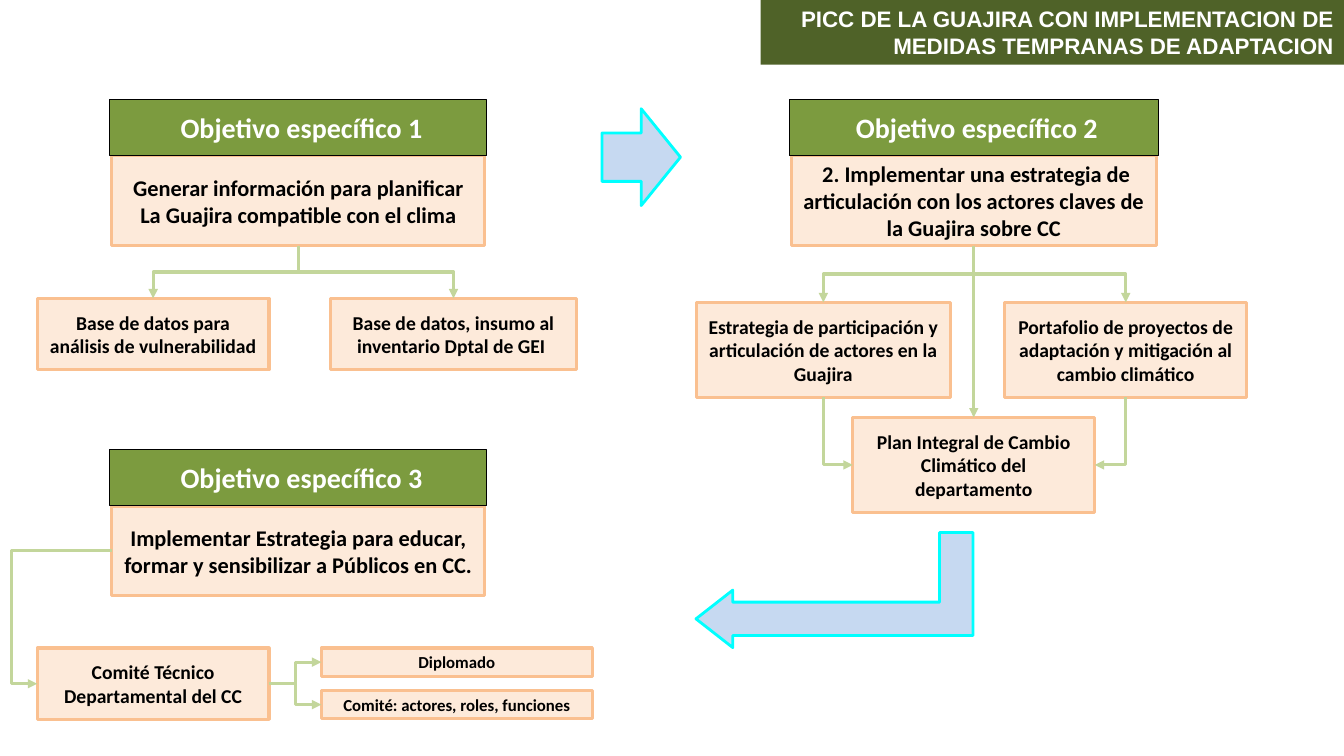
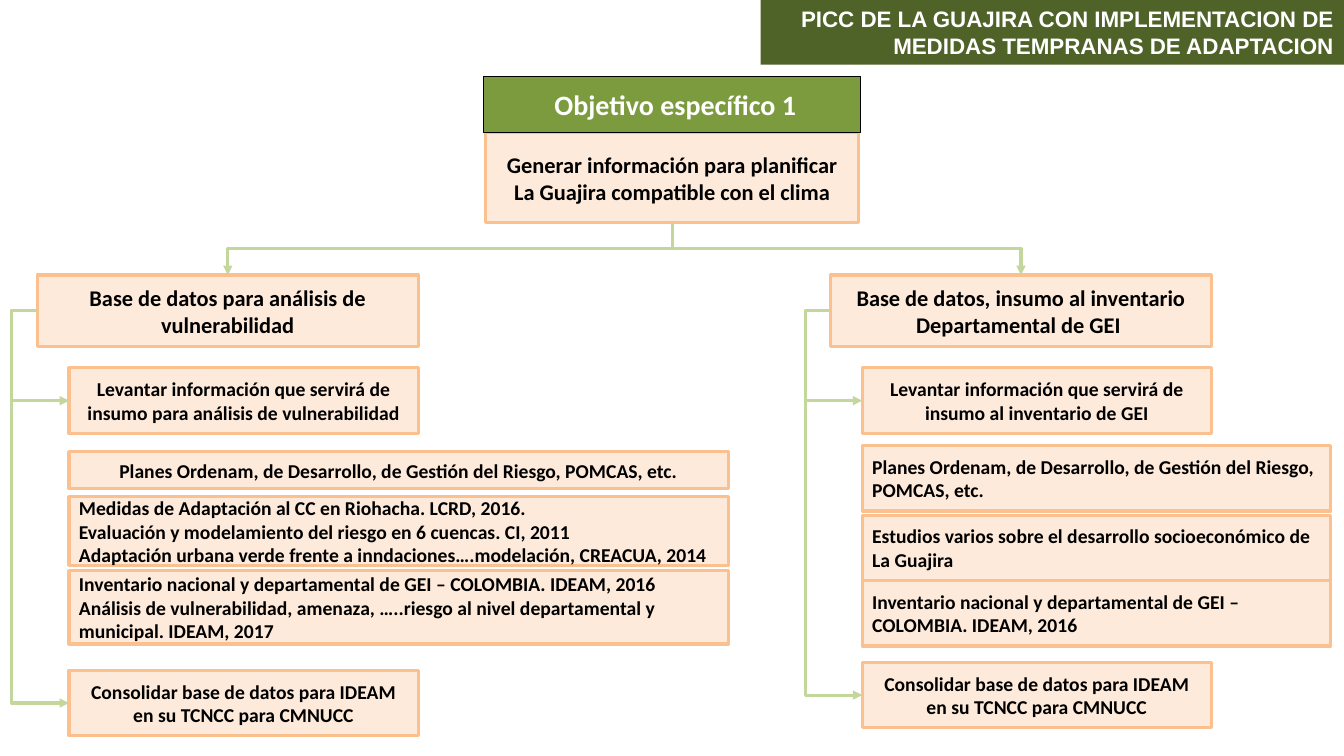
from typing import NamedTuple, Optional

from pptx import Presentation
from pptx.dml.color import RGBColor
from pptx.enum.shapes import MSO_CONNECTOR, MSO_SHAPE
from pptx.enum.text import MSO_ANCHOR, MSO_AUTO_SIZE, PP_ALIGN
from pptx.oxml.ns import qn
from pptx.oxml.xmlchemy import OxmlElement
from pptx.shapes.autoshape import Shape
from pptx.shapes.connector import Connector
from pptx.slide import Slide
from pptx.util import Cm, Pt

# Shared look
BAND, HEAD, CREAM, PEACH = "4F6228", "7C9B3F", "FDEADA", "FAC090"
LINK, SKY, CYAN = "C3D69B", "C6D9F1", "00FFFF"
WHITE, BLACK = "FFFFFF", "000000"
TITLE = "PICC DE LA GUAJIRA CON IMPLEMENTACION DE MEDIDAS TEMPRANAS DE ADAPTACION"
GOAL = "Generar información para planificar La Guajira compatible con el clima"
MERGE = "Consolidar base de datos para IDEAM en su TCNCC para CMNUCC"
HEAD_H, BODY_H, NODE_H, STEP_H = 1.42, 2.26, 1.8, 1.65
INDENT, LOOP = 0.8, 0.64
TOP, LEFT, BOTTOM, RIGHT = range(4)  # connection sites of a rectangle


class Box(NamedTuple):
    """A text box of the chart; lengths in cm."""
    x: float
    y: float
    w: float
    h: float
    text: str
    size: int = 14
    align: PP_ALIGN = PP_ALIGN.CENTER
    fill: str = CREAM
    edge: str = PEACH
    width: float = 2.25
    ink: str = BLACK


class Branch(NamedTuple):
    """A column of slide 2: base, first step, sources and last step."""
    x: float
    base: str
    step: str
    wide: float
    items: list[tuple[float, float, str, PP_ALIGN]]
    end: float


def rgb(code: str) -> RGBColor:
    return RGBColor.from_string(code)


def paint(shape: Shape, fill: str, edge: str, width: float) -> None:
    shape.shadow.inherit = False
    shape.fill.solid()
    shape.fill.fore_color.rgb = rgb(fill)
    shape.line.color.rgb = rgb(edge)
    shape.line.width = Pt(width)


def write(shape: Shape, text: str, size: int, ink: str, align: PP_ALIGN,
          face: str = "Calibri") -> None:
    frame = shape.text_frame
    frame.word_wrap = True
    for i, line in enumerate(text.split("\n")):
        para = frame.add_paragraph() if i else frame.paragraphs[0]
        para.alignment = align
        run = para.add_run()
        run.text = line
        font = run.font
        font.name, font.size, font.bold = face, Pt(size), True
        font.color.rgb = rgb(ink)


def draw(slide: Slide, box: Box) -> Shape:
    shape = slide.shapes.add_shape(
        MSO_SHAPE.RECTANGLE, Cm(box.x), Cm(box.y), Cm(box.w), Cm(box.h))
    paint(shape, box.fill, box.edge, box.width)
    shape.text_frame.vertical_anchor = MSO_ANCHOR.MIDDLE
    write(shape, box.text, box.size, box.ink, box.align)
    return shape


def goal(slide: Slide, num: int, x: float, y: float, w: float, text: str) -> Shape:
    """Draw a numbered heading on its statement; return the statement."""
    body = draw(slide, Box(x, y + HEAD_H, w, BODY_H, text, 16))
    draw(slide, Box(x - 0.05, y, w + 0.1, HEAD_H, f" Objetivo específico {num}", 20,
                    fill=HEAD, edge=BLACK, width=0.75, ink=WHITE))
    return body


def turn(line: Connector) -> None:
    """Rotate an elbow so that it leaves its start downwards."""
    x1, y1, x2, y2 = line.begin_x, line.begin_y, line.end_x, line.end_y
    long, wide = y2 - y1, abs(x2 - x1)
    frame = line._element.spPr.find(qn("a:xfrm"))
    frame.attrib.clear()
    line.left, line.top = (x1 + x2 - long) // 2, (y1 + y2 - wide) // 2
    line.width, line.height = long, wide
    frame.set("rot", str((270 if x2 > x1 else 90) * 60000))
    if x2 > x1:
        frame.set("flipH", "1")


def link(slide: Slide, start: Shape, out: int, end: Shape, into: int,
         kind: MSO_CONNECTOR = MSO_CONNECTOR.ELBOW,
         via: Optional[float] = None) -> None:
    """Join two boxes with an arrow; via is the x of an outer bend in cm."""
    line = slide.shapes.add_connector(kind, 0, 0, 0, 0)
    line.begin_connect(start, out)
    line.end_connect(end, into)
    line.line.color.rgb = rgb(LINK)
    line.line.width = Pt(2.25)
    props = line._element.spPr
    form = props.find(qn("a:prstGeom"))
    if via is not None:
        ratio = (Cm(via) - line.begin_x) / (line.end_x - line.begin_x)
        guide = OxmlElement("a:gd")
        guide.set("name", "adj1")
        guide.set("fmla", f"val {round(ratio * 100000)}")
        form.find(qn("a:avLst")).append(guide)
    if kind == MSO_CONNECTOR.ELBOW and out == BOTTOM:
        turn(line)
        if into != TOP:
            form.set("prst", "bentConnector2")
    tip = OxmlElement("a:tailEnd")
    tip.set("type", "triangle")
    line.line._get_or_add_ln().append(tip)
    props.append(OxmlElement("a:effectLst"))


def arrow(slide: Slide, kind: MSO_SHAPE, x: float, y: float, w: float, h: float,
          angle: int) -> Shape:
    shape = slide.shapes.add_shape(kind, Cm(x), Cm(y), Cm(w), Cm(h))
    paint(shape, SKY, CYAN, 2)
    shape.rotation = angle
    return shape


def start(deck: Presentation) -> Slide:
    """Add a slide with the title band."""
    slide = deck.slides.add_slide(deck.slide_layouts[5])
    band = slide.shapes.title
    band.left, band.top, band.width, band.height = Cm(19.17), Cm(0), Cm(14.7), Cm(1.63)
    band.fill.solid()
    band.fill.fore_color.rgb = rgb(BAND)
    band.text_frame.auto_size = MSO_AUTO_SIZE.NONE
    band.text_frame.vertical_anchor = MSO_ANCHOR.TOP
    write(band, TITLE, 16, WHITE, PP_ALIGN.RIGHT, "Arial")
    return slide


def plan(deck: Presentation) -> None:
    slide = start(deck)

    # Goal 1
    first = goal(slide, 1, 2.82, 2.51, 9.4, GOAL)
    for box in (
        Box(0.94, 7.52, 5.84, NODE_H, "Base de datos para análisis de vulnerabilidad"),
        Box(8.33, 7.52, 6.2, NODE_H, "Base de datos, insumo al inventario Dptal de GEI "),
    ):
        link(slide, first, BOTTOM, draw(slide, box), TOP)

    # Goal 2
    second = goal(slide, 2, 19.94, 2.51, 9.2,
                  " 2. Implementar una estrategia de articulación con los actores "
                  "claves de la Guajira sobre CC")
    whole = draw(slide, Box(21.49, 10.52, 6.1, 2.39,
                            "Plan Integral de Cambio Climático del departamento"))
    link(slide, second, BOTTOM, whole, TOP, MSO_CONNECTOR.STRAIGHT)
    for box, side in (
        (Box(17.55, 7.62, 6.4, 2.39, "Estrategia de participación y articulación "
             "de actores en la Guajira"), LEFT),
        (Box(25.32, 7.62, 6.1, 2.39, "Portafolio de proyectos de adaptación y "
             "mitigación al cambio climático"), RIGHT),
    ):
        node = draw(slide, box)
        link(slide, second, BOTTOM, node, TOP)
        link(slide, node, BOTTOM, whole, side)

    # Goal 3
    third = goal(slide, 3, 2.82, 11.33, 9.4,
                 "Implementar Estrategia para educar, formar y sensibilizar a "
                 "Públicos en CC.")
    team = draw(slide, Box(0.94, 16.33, 5.84, NODE_H,
                           "Comité Técnico Departamental del CC"))
    link(slide, third, LEFT, team, LEFT, via=0.94 - LOOP)
    for y, text in ((16.33, "Diplomado"), (17.4, "Comité: actores, roles, funciones")):
        link(slide, team, RIGHT, draw(slide, Box(8.1, y, 6.83, 0.71, text, 12)), LEFT)

    # Arrows from goal to goal
    arrow(slide, MSO_SHAPE.DOWN_ARROW, 14.94, 2.97, 2.44, 1.98, 270)
    bent = arrow(slide, MSO_SHAPE.BENT_UP_ARROW, 19.58, 11.38, 2.9, 6.98, 90)
    bent._element.spPr.find(qn("a:xfrm")).set("flipV", "1")
    for i, part in enumerate((0.29, 0.25, 0.32)):
        bent.adjustments[i] = part


def detail(deck: Presentation) -> None:
    slide = start(deck)
    top = goal(slide, 1, 12.24, 1.93, 9.4, GOAL)
    mid, left = PP_ALIGN.CENTER, PP_ALIGN.LEFT
    docs = "Planes Ordenam, de Desarrollo, de Gestión del Riesgo, POMCAS, etc."
    stock = "Inventario nacional y departamental de GEI – COLOMBIA. IDEAM, 2016"
    for col in (
        Branch(0.94, "Base de datos para análisis de vulnerabilidad",
               "Levantar información que servirá de insumo para análisis de "
               "vulnerabilidad", 16.61, [
                   (11.38, 0.94, docs, mid),
                   (12.52, 1.73, "Medidas de Adaptación al CC en Riohacha. LCRD, 2016.\n"
                    "Evaluación y modelamiento del riesgo en 6 cuencas. CI, 2011\n"
                    "Adaptación urbana verde frente a inndaciones….modelación, "
                    "CREACUA, 2014", left),
                   (14.38, 1.85, stock + "\nAnálisis de vulnerabilidad, amenaza, "
                    "…..riesgo al nivel departamental y municipal. IDEAM, 2017", left),
               ], 16.89),
        Branch(20.93, "Base de datos, insumo al inventario Departamental de GEI ",
               "Levantar información que servirá de insumo al inventario de GEI",
               11.81, [
                   (11.23, STEP_H, docs, left),
                   (12.98, STEP_H, "Estudios varios sobre el desarrollo "
                    "socioeconómico de La Guajira", left),
                   (14.63, STEP_H, stock, left),
               ], 16.69),
    ):
        base = draw(slide, Box(col.x, 6.93, 9.6, NODE_H, col.base, 16))
        link(slide, top, BOTTOM, base, TOP)
        inner = col.x + INDENT
        for y, text in ((9.27, col.step), (col.end, MERGE)):
            step = draw(slide, Box(inner, y, 9.6 - INDENT, STEP_H, text))
            link(slide, base, LEFT, step, LEFT, via=col.x - LOOP)
        # Sources
        for y, h, text, align in col.items:
            draw(slide, Box(inner, y, col.wide, h, text, align=align))


def main() -> None:
    deck = Presentation()
    deck.slide_width, deck.slide_height = Cm(33.87), Cm(19.05)
    plan(deck)
    detail(deck)
    deck.save("out.pptx")


if __name__ == "__main__":
    main()
